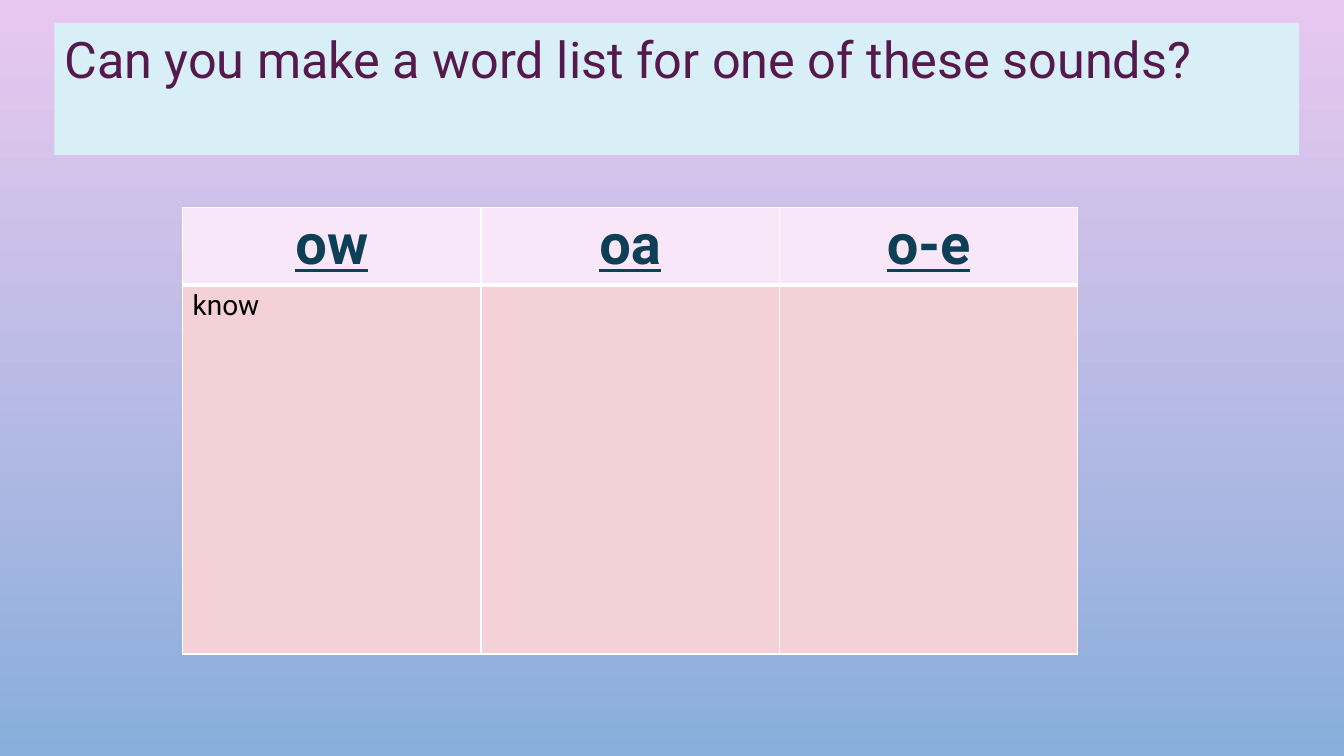
from dataclasses import dataclass

import lxml.etree
import pptx
import pptx.dml.color
import pptx.enum.dml
import pptx.enum.text
import pptx.oxml.ns
import pptx.util

Cm = pptx.util.Cm
Pt = pptx.util.Pt
FONT = "Roboto"


@dataclass
class RowStyle:
    height: float
    fill: str
    color: str
    size: int
    heading: bool
    top: int
    bottom: int


HEADER = RowStyle(1.92, "F8E7F9", "0F3F56", 40, True, 1, 3)
BODY = RowStyle(9.3, "F4D0D7", "000000", 20, False, 3, 1)
WORD_LISTS = [(HEADER, ["ow", "oa", "o-e"]), (BODY, ["know", "", ""])]
COLUMN_WIDTH = 7.52


def rgb(color: str) -> pptx.dml.color.RGBColor:
    return pptx.dml.color.RGBColor.from_string(color)


def set_fill(fill, color: str) -> None:
    fill.solid()
    fill.fore_color.rgb = rgb(color)


def set_font(p, size: int, color: str, heading: bool = False) -> None:
    p.font.name = FONT
    p.font.size = Pt(size)
    p.font.color.rgb = rgb(color)
    p.font.bold = heading
    p.font.underline = heading


def set_borders(cell, top: int, bottom: int, color: str = "FFFFFF") -> None:
    """Draw all four borders; the sides are 1 point wide."""
    qn = pptx.oxml.ns.qn
    tc_pr = cell._tc.get_or_add_tcPr()
    widths = {"a:lnL": 1, "a:lnR": 1, "a:lnT": top, "a:lnB": bottom}
    for i, (tag, width) in enumerate(widths.items()):
        ln = lxml.etree.Element(qn(tag), w=str(Pt(width)))
        solid = lxml.etree.SubElement(ln, qn("a:solidFill"))
        lxml.etree.SubElement(solid, qn("a:srgbClr"), val=color)
        tc_pr.insert(i, ln)


def set_background(s, top: str, bottom: str) -> None:
    fill = s.background.fill
    fill.gradient()
    fill.gradient_angle = 270
    for stop, color, position in zip(fill.gradient_stops, (top, bottom), (0, 1)):
        stop.color.rgb = rgb(color)
        stop.position = position


def add_title(s, text: str) -> None:
    sp = s.shapes.add_textbox(Cm(1.37), Cm(0.58), Cm(31.37), Cm(3.33))
    set_fill(sp.fill, "D9EFF7")
    tf = sp.text_frame
    tf.word_wrap = True
    p = tf.paragraphs[0]
    p.text = text
    set_font(p, 36, "56194D")


def fill_cell(cell, text: str, style: RowStyle) -> None:
    set_fill(cell.fill, style.fill)
    set_borders(cell, style.top, style.bottom)
    p = cell.text_frame.paragraphs[0]
    p.text = text
    if style.heading:
        p.alignment = pptx.enum.text.PP_ALIGN.CENTER
    set_font(p, style.size, style.color, style.heading)


def add_word_table(s) -> None:
    columns = len(WORD_LISTS[0][1])
    height = sum(style.height for style, _ in WORD_LISTS)
    table = s.shapes.add_table(
        len(WORD_LISTS), columns, Cm(4.6), Cm(5.23), Cm(columns * COLUMN_WIDTH), Cm(height)
    ).table
    table.horz_banding = False
    for column in table.columns:
        column.width = Cm(COLUMN_WIDTH)
    for row, (style, texts) in zip(table.rows, WORD_LISTS):
        row.height = Cm(style.height)
        for cell, text in zip(row.cells, texts):
            fill_cell(cell, text, style)


def main() -> None:
    prs = pptx.Presentation()
    prs.slide_width, prs.slide_height = Cm(33.87), Cm(19.05)
    s = prs.slides.add_slide(prs.slide_layouts[6])
    set_background(s, "E9C8EF", "89AEDB")
    add_title(s, "Can you make a word list for one of these sounds?")
    add_word_table(s)
    prs.save("out.pptx")


if __name__ == "__main__":
    main()
